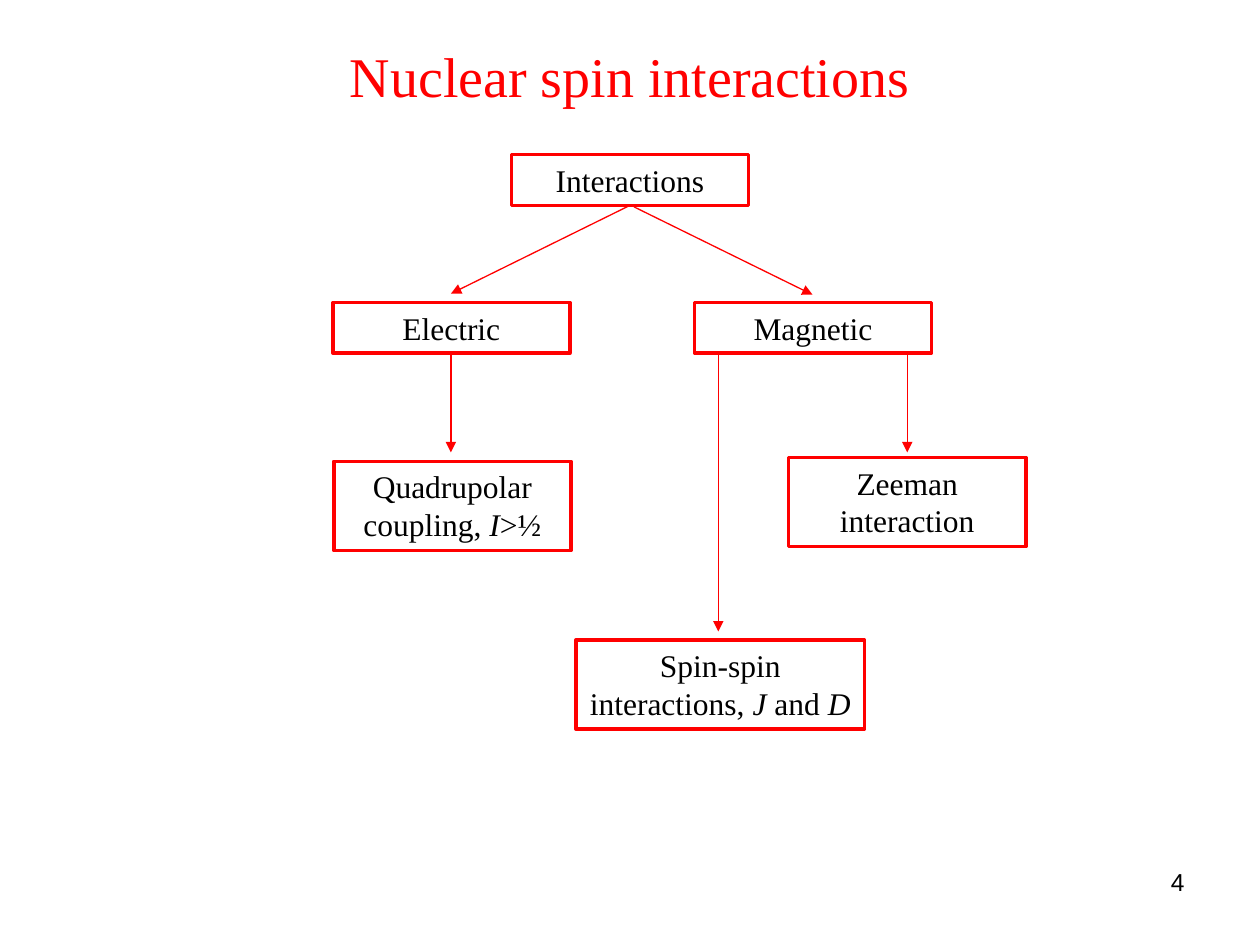
from dataclasses import dataclass

from lxml import etree
from pptx import Presentation
from pptx.dml.color import RGBColor
from pptx.enum.shapes import MSO_CONNECTOR, MSO_SHAPE
from pptx.enum.text import MSO_ANCHOR, MSO_AUTO_SIZE, PP_ALIGN
from pptx.oxml.ns import qn
from pptx.util import Cm, Pt

RECTANGLE = MSO_SHAPE.RECTANGLE
STRAIGHT = MSO_CONNECTOR.STRAIGHT
MIDDLE = MSO_ANCHOR.MIDDLE
GROW = MSO_AUTO_SIZE.SHAPE_TO_FIT_TEXT
CENTER, RIGHT = PP_ALIGN.CENTER, PP_ALIGN.RIGHT

TITLE_ONLY = 5
SERIF, SANS = "Times New Roman", "Arial"
RED, BLACK = "FF0000", "000000"
ONE_LINE, TWO_LINES = 1.02, 1.8


@dataclass
class Node:
    """A framed label, in cm; every second span is italic."""
    spans: tuple[str, ...]
    left: float
    top: float
    height: float = ONE_LINE
    width: float = 4.78


@dataclass
class Arrow:
    start: tuple[float, float]
    end: tuple[float, float]


NODES = [
    Node(("Interactions",), 10.31, 3.12),
    Node(("Electric",), 6.71, 6.1),
    Node(("Magnetic",), 14, 6.1),
    Node(("Quadrupolar coupling, ", "I", ">½"), 6.73, 9.3, TWO_LINES),
    Node(("Zeeman interaction",), 15.9, 9.22, TWO_LINES),
    Node(("Spin-spin interactions, ", "J", " and ", "D"), 11.61, 12.9, TWO_LINES, 5.82),
]
ARROWS = [
    Arrow((12.7, 4.14), (9.09, 5.92)),
    Arrow((12.78, 4.17), (16.38, 5.94)),
    Arrow((9.09, 7.14), (9.09, 9.12)),
    Arrow((14.48, 7.14), (14.48, 12.73)),
    Arrow((18.29, 7.14), (18.29, 9.12)),
]


def color(value: str) -> RGBColor:
    return RGBColor.from_string(value)


def format_paragraph(para, size: int, name: str, value: str, alignment) -> None:
    para.alignment = alignment
    para.font.size = Pt(size)
    para.font.name = name
    para.font.color.rgb = color(value)


def add_title(page, text: str) -> None:
    title = page.shapes.title
    title.left, title.top, title.width, title.height = Cm(1.27), Cm(-0.08), Cm(22.86), Cm(3.18)
    title.text_frame.text = text
    title.text_frame.vertical_anchor = MIDDLE
    format_paragraph(title.text_frame.paragraphs[0], 32, SERIF, RED, CENTER)


def add_page_number(page, number: str) -> None:
    box = page.shapes.add_textbox(Cm(18.21), Cm(17.35), Cm(5.92), Cm(1.32))
    box.text_frame.word_wrap = True
    box.text_frame.text = number
    format_paragraph(box.text_frame.paragraphs[0], 14, SANS, BLACK, RIGHT)


def add_node(page, node: Node) -> None:
    box = page.shapes.add_shape(
        RECTANGLE, Cm(node.left), Cm(node.top), Cm(node.width), Cm(node.height))
    box.shadow.inherit = False
    box.fill.background()
    box.line.color.rgb = color(RED)
    box.line.width = Pt(2)
    frame = box.text_frame
    frame.word_wrap = True
    frame.auto_size = GROW
    frame.vertical_anchor = MSO_ANCHOR.TOP
    para = frame.paragraphs[0]
    format_paragraph(para, 18, SERIF, BLACK, CENTER)
    for index, text in enumerate(node.spans):
        span = para.add_run()
        span.text = text
        if index % 2:
            span.font.italic = True


def add_arrow(page, arrow: Arrow) -> None:
    line = page.shapes.add_connector(STRAIGHT, *map(Cm, arrow.start + arrow.end))
    line.line.color.rgb = color(RED)
    line.line.width = Pt(0.75)
    properties = line.line._get_or_add_ln()
    etree.SubElement(properties, qn("a:tailEnd"), type="triangle")
    etree.SubElement(line._element.spPr, qn("a:effectLst"))


def main() -> None:
    deck = Presentation()
    deck.slide_width, deck.slide_height = Cm(25.4), Cm(19.05)
    page = deck.slides.add_slide(deck.slide_layouts[TITLE_ONLY])
    add_title(page, "Nuclear spin interactions")
    add_page_number(page, "4")
    for node in NODES:
        add_node(page, node)
    for arrow in ARROWS:
        add_arrow(page, arrow)
    deck.save("out.pptx")


if __name__ == "__main__":
    main()
